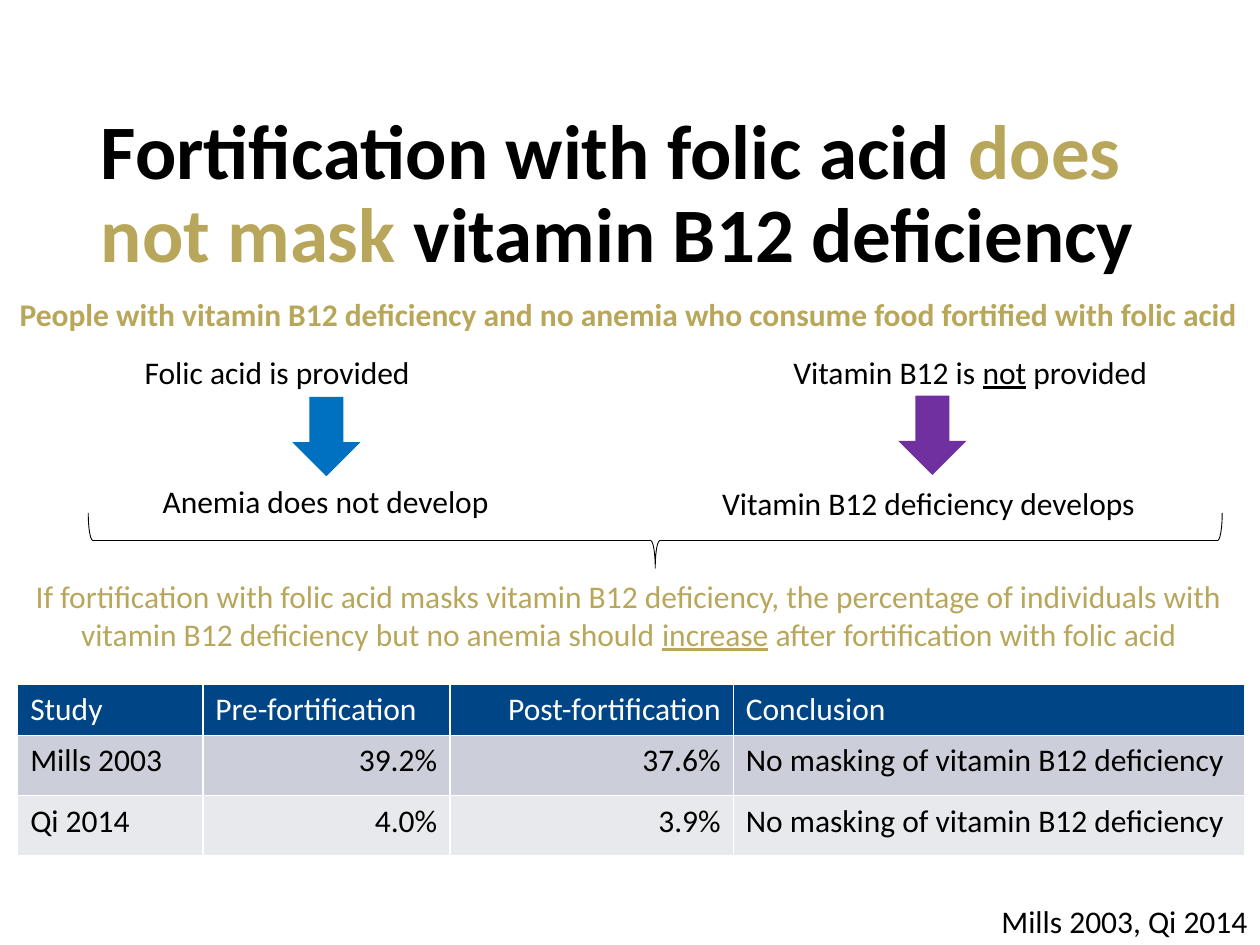
from dataclasses import dataclass

from pptx import Presentation
from pptx.dml.color import RGBColor
from pptx.enum.shapes import MSO_SHAPE
from pptx.enum.text import MSO_ANCHOR, MSO_AUTO_SIZE, PP_ALIGN
from pptx.shapes.autoshape import Shape
from pptx.slide import Slide
from pptx.table import Table
from pptx.text.text import _Paragraph as Paragraph
from pptx.util import Inches, Pt

FONT = "Calibri"
BLACK, WHITE, GOLD = "000000", "FFFFFF", "B8A75A"
NAVY, GREY, PALE_GREY = "004585", "CCCFD9", "E7E9ED"
BLUE, PURPLE = "0070C0", "7030A0"


@dataclass(frozen=True)
class Span:
    text: str
    color: str = BLACK
    size: int = 18
    bold: bool = False
    underline: bool = False


@dataclass(frozen=True)
class Box:
    left: float
    top: float
    width: float
    height: float

    def lengths(self) -> tuple:
        return tuple(Inches(n) for n in (self.left, self.top, self.width, self.height))


@dataclass(frozen=True)
class Statement:
    box: Box
    spans: tuple[Span, ...]
    align: PP_ALIGN = PP_ALIGN.CENTER


@dataclass(frozen=True)
class Arrow:
    box: Box
    color: str


TITLE_BOX = Box(0.7, 0.83, 8.62, 1.45)
TITLE = (
    Span("Fortification with folic acid ", BLACK, 44, True),
    Span("does not mask ", GOLD, 44, True),
    Span("vitamin B12 deficiency", BLACK, 44, True),
)
STATEMENTS = (
    Statement(Box(-0.01, 2.29, 10, 0.4), (
        Span("People with vitamin B12 deficiency and no anemia who consume food "
             "fortified with folic acid", GOLD, bold=True),
    )),
    Statement(Box(0.14, 2.75, 4.12, 0.4), (Span("Folic acid is provided"),)),
    Statement(Box(5.53, 2.75, 4.34, 0.4), (
        Span("Vitamin B12 is "), Span("not", underline=True), Span(" provided"),
    )),
    Statement(Box(0.7, 3.78, 3.77, 0.4), (Span("Anemia does not develop"),)),
    Statement(Box(5.04, 3.79, 4.66, 0.4), (Span("Vitamin B12 deficiency develops"),)),
    Statement(Box(-0.01, 4.53, 10, 0.71), (
        Span("If fortification with folic acid masks vitamin B12 deficiency, the percentage "
             "of individuals with vitamin B12 deficiency but no anemia should ", GOLD),
        Span("increase", GOLD, underline=True),
        Span(" after fortification with folic acid", GOLD),
    )),
    Statement(Box(7.25, 7.11, 2.75, 0.4), (Span("Mills 2003, Qi 2014"),), PP_ALIGN.RIGHT),
)
ARROWS = (
    Arrow(Box(2.32, 3.15, 0.54, 0.63), BLUE),
    Arrow(Box(7.13, 3.14, 0.54, 0.63), PURPLE),
)
BRACE_BOX = Box(4.98, -0.21, 0.44, 9)
TABLE_BOX = Box(0.14, 5.43, 9.74, 1.36)
COLUMN_WIDTHS = (1.47, 1.96, 2.25, 4.06)
ROW_HEIGHTS = (0.4, 0.48, 0.48)
ROW_FILLS = (NAVY, GREY, PALE_GREY)
STUDIES = (
    ("Study", "Pre-fortification", "Post-fortification", "Conclusion"),
    ("Mills 2003", "39.2%", "37.6%", "No masking of vitamin B12 deficiency"),
    ("Qi 2014", "4.0%", "3.9%", "No masking of vitamin B12 deficiency"),
)


def rgb(color: str) -> RGBColor:
    """Turn a hex string into a colour."""
    return RGBColor.from_string(color)


def add_spans(paragraph: Paragraph, spans: tuple[Span, ...], align: PP_ALIGN) -> None:
    """Write formatted runs into an aligned paragraph."""
    paragraph.alignment = align
    for span in spans:
        run = paragraph.add_run()
        run.text = span.text
        run.font.name = FONT
        run.font.size = Pt(span.size)
        run.font.bold = span.bold
        run.font.underline = span.underline
        run.font.color.rgb = rgb(span.color)


def fill_title(slide: Slide) -> None:
    """Place and write the slide title."""
    title = slide.shapes.title
    title.left, title.top, title.width, title.height = TITLE_BOX.lengths()
    frame = title.text_frame
    frame.auto_size = MSO_AUTO_SIZE.NONE
    frame.vertical_anchor = MSO_ANCHOR.MIDDLE
    frame.paragraphs[0].line_spacing = 0.9
    add_spans(frame.paragraphs[0], TITLE, PP_ALIGN.LEFT)


def draw_statement(slide: Slide, statement: Statement) -> None:
    """Add one wrapped line of the argument."""
    frame = slide.shapes.add_textbox(*statement.box.lengths()).text_frame
    frame.word_wrap = True
    frame.auto_size = MSO_AUTO_SIZE.SHAPE_TO_FIT_TEXT
    add_spans(frame.paragraphs[0], statement.spans, statement.align)


def add_preset(slide: Slide, preset: MSO_SHAPE, box: Box) -> Shape:
    """Add a preset shape without a shadow."""
    shape = slide.shapes.add_shape(preset, *box.lengths())
    shape.shadow.inherit = False
    return shape


def draw_arrow(slide: Slide, arrow: Arrow) -> None:
    """Add a solid down arrow."""
    shape = add_preset(slide, MSO_SHAPE.DOWN_ARROW, arrow.box)
    shape.fill.solid()
    shape.fill.fore_color.rgb = rgb(arrow.color)
    shape.line.fill.background()


def draw_brace(slide: Slide) -> None:
    """Add the brace that joins both outcomes."""
    brace = add_preset(slide, MSO_SHAPE.RIGHT_BRACE, BRACE_BOX)
    brace.rotation = 90
    brace.fill.background()
    brace.line.color.rgb = rgb(BLACK)
    brace.line.width = Pt(0.5)


def fill_row(table: Table, row: int) -> None:
    """Write and colour one row of the study table."""
    table.rows[row].height = Inches(ROW_HEIGHTS[row])
    for column, text in enumerate(STUDIES[row]):
        cell = table.cell(row, column)
        cell.fill.solid()
        cell.fill.fore_color.rgb = rgb(ROW_FILLS[row])
        is_number = column == 2 or (column == 1 and row > 0)
        align = PP_ALIGN.RIGHT if is_number else PP_ALIGN.LEFT
        span = Span(text, BLACK if row else WHITE)
        add_spans(cell.text_frame.paragraphs[0], (span,), align)


def draw_studies(slide: Slide) -> None:
    """Add the table of study results."""
    table = slide.shapes.add_table(
        len(STUDIES), len(COLUMN_WIDTHS), *TABLE_BOX.lengths()
    ).table
    for column, width in zip(table.columns, COLUMN_WIDTHS):
        column.width = Inches(width)
    for row in range(len(STUDIES)):
        fill_row(table, row)


def main() -> None:
    """Build and save the slide."""
    deck = Presentation()
    deck.slide_width, deck.slide_height = Inches(10), Inches(7.5)
    slide = deck.slides.add_slide(deck.slide_layouts[5])
    fill_title(slide)
    draw_studies(slide)
    for statement in STATEMENTS:
        draw_statement(slide, statement)
    for arrow in ARROWS:
        draw_arrow(slide, arrow)
    draw_brace(slide)
    deck.save("out.pptx")


if __name__ == "__main__":
    main()
